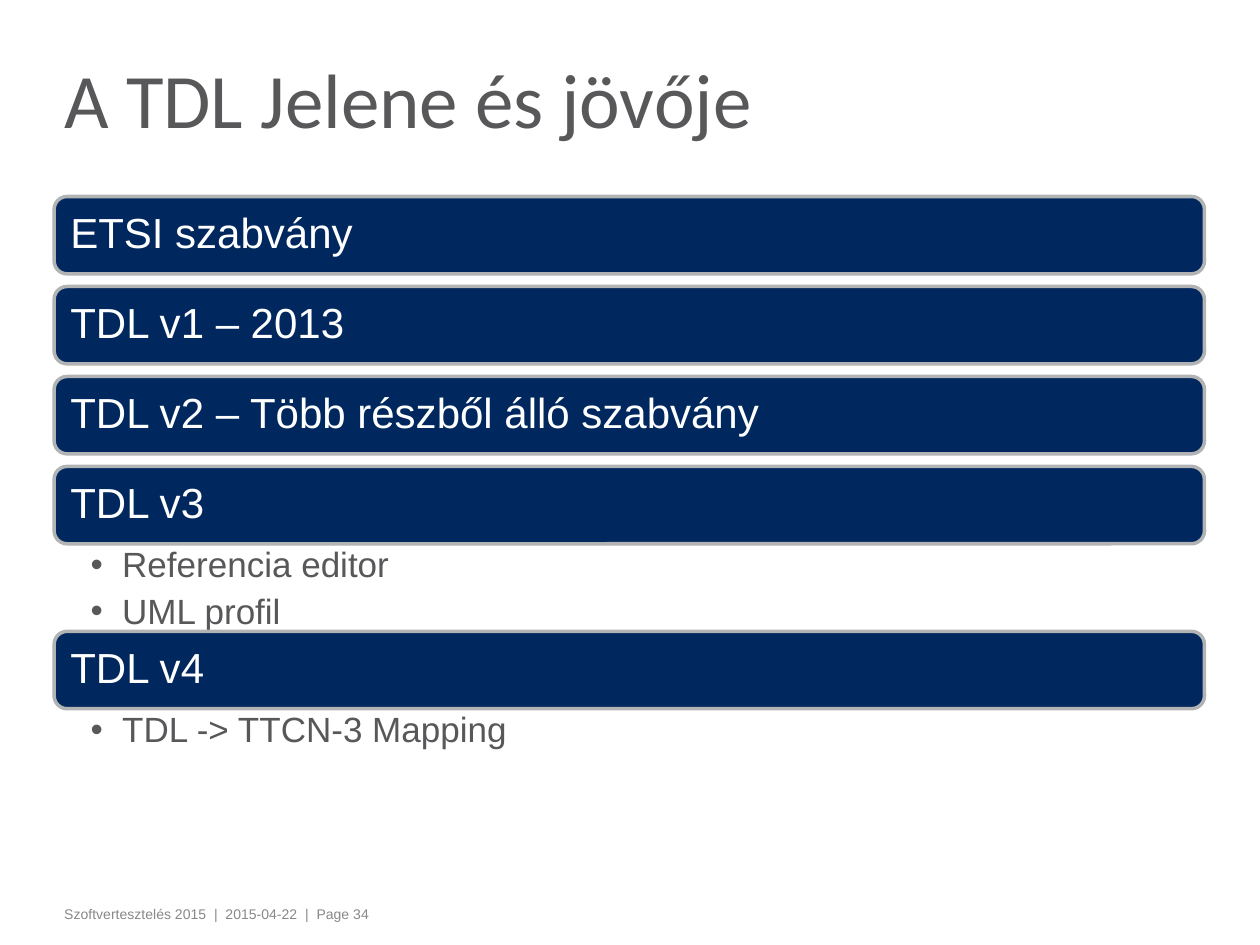
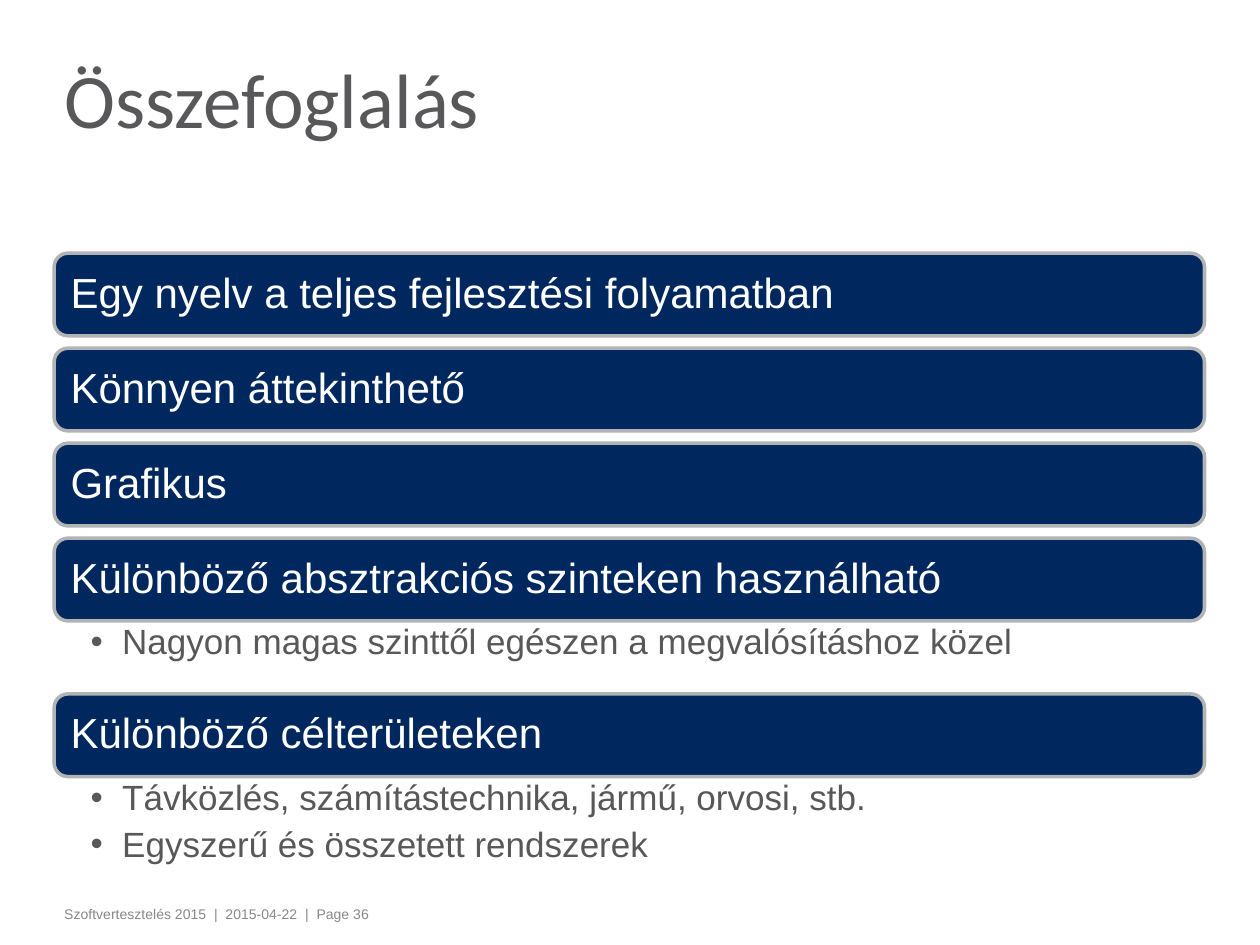
from dataclasses import dataclass
from lxml.etree import SubElement as Sub
from pptx import Presentation as Deck
from pptx.dml.color import RGBColor as Rgb
from pptx.enum.shapes import MSO_SHAPE as Geo
from pptx.enum.text import MSO_ANCHOR as Anchor, MSO_AUTO_SIZE as Auto, PP_ALIGN as Align
from pptx.oxml.ns import qn
from pptx.util import Inches, Pt


@dataclass(frozen=True)
class Theme:
    navy: str = "00285E"
    edge: str = "B1B3B4"
    white: str = "FFFFFF"
    ink: str = "58585A"
    grey: str = "87888A"
    head: str = "Calibri"
    body: str = "Arial"
    big: int = 44
    mid: int = 24
    small: int = 20
    tiny: int = 8


# Grid: 100 columns by 75 rows; content shares one left edge and width
COLS, ROWS = 100, 75
LEFT, WIDE = 4.3, 91.3


def put(obj, vals):
    for name, val in vals.items():
        setattr(obj, name, val)


class Page:
    def __init__(self, deck, theme):
        self.deck, self.theme = deck, theme
        self.slide = None

    def box(self, x, y, w, h):
        col, row = self.deck.slide_width / COLS, self.deck.slide_height / ROWS
        return [round(v) for v in (x * col, y * row, w * col, h * row)]

    def label(self, shape, lines, size, color, face, pad, anchor=Anchor.TOP,
              bullet=False, **para):
        frame = shape.text_frame
        sides = ("margin_left", "margin_top", "margin_right", "margin_bottom")
        put(frame, {"word_wrap": True, "auto_size": Auto.NONE,
                    "vertical_anchor": anchor,
                    **{s: Inches(p) for s, p in zip(sides, pad)}})
        frame.text = "\n".join(lines)
        for par in frame.paragraphs:
            if bullet:
                props = par._p.get_or_add_pPr()
                for key, val in {"marL": 0.25, "indent": -0.25}.items():
                    props.set(key, str(Inches(val)))
                Sub(props, qn("a:buFont"), typeface=face)
                Sub(props, qn("a:buChar"), char="•")
            put(par, {"alignment": Align.LEFT, **para})
            put(par.font, {"size": Pt(size), "name": face})
            par.font.color.rgb = Rgb.from_string(color)

    def text(self, x, y, w, h, *args, **opts):
        self.label(self.slide.shapes.add_textbox(*self.box(x, y, w, h)), *args, **opts)

    def start(self, title, num):
        t = self.theme
        self.slide = self.deck.slides.add_slide(self.deck.slide_layouts[5])
        head = self.slide.shapes.title
        put(head, dict(zip(("left", "top", "width", "height"),
                           self.box(LEFT, 2.6, 82, 11.9))))
        self.label(head, [title], t.big, t.ink, t.head, (0.08, 0, 0.08, 0),
                   Anchor.MIDDLE, line_spacing=0.75)
        self.text(LEFT, 71.4, 80.9, 2.4,
                  [f"Szoftvertesztelés 2015  |  2015-04-22  |  Page {num}"],
                  t.tiny, t.grey, t.body, (0.08, 0.05, 0.08, 0.05))

    def bar(self, y, high, name):
        t = self.theme
        bar = self.slide.shapes.add_shape(Geo.ROUNDED_RECTANGLE,
                                          *self.box(LEFT, y, WIDE, high))
        bar.shadow.inherit = False
        bar.fill.solid()
        bar.fill.fore_color.rgb = Rgb.from_string(t.navy)
        bar.line.color.rgb = Rgb.from_string(t.edge)
        bar.line.width = Pt(2)
        self.label(bar, [name], t.mid, t.white, t.body, (0.1,) * 4,
                   Anchor.MIDDLE, line_spacing=0.9)

    def notes(self, y, high, lines):
        t = self.theme
        self.text(LEFT, y, WIDE, high, lines, t.small, t.ink, t.body,
                  (0.29, 0.03, 0.16, 0.03), bullet=True,
                  line_spacing=0.9, space_after=Pt(5))

    def stack(self, y, high, gap, items):
        """Bars run downward; bullets, where given, fill the space to the next."""
        for name, room, lines in items:
            self.bar(y, high, name)
            y += high
            if lines:
                self.notes(y, room, lines)
            y += room or gap


# Each item: bar label, rows kept for bullets, bullets
PAGES = [
    ("A TDL Jelene és jövője", 34, 15.6, 6.14, 1, [
        ("ETSI szabvány", 0, []),
        ("TDL v1 – 2013", 0, []),
        ("TDL v2 – Több részből álló szabvány", 0, []),
        ("TDL v3", 6.95, ["Referencia editor", "UML profil"]),
        ("TDL v4", 5.4, ["TDL -> TTCN-3 Mapping"]),
    ]),
    ("Összefoglalás", 36, 20.1, 6.56, 0.98, [
        ("Egy nyelv a teljes fejlesztési folyamatban", 0, []),
        ("Könnyen áttekinthető", 0, []),
        ("Grafikus", 0, []),
        ("Különböző absztrakciós szinteken használható", 5.8,
         ["Nagyon magas szinttől egészen a megvalósításhoz közel"]),
        ("Különböző célterületeken", 7.1,
         ["Távközlés, számítástechnika, jármű, orvosi, stb.",
          "Egyszerű és összetett rendszerek"]),
    ]),
]


def main():
    deck = Deck()
    put(deck, {"slide_width": Inches(10), "slide_height": Inches(7.5)})
    page = Page(deck, Theme())
    for title, num, top, high, gap, items in PAGES:
        page.start(title, num)
        page.stack(top, high, gap, items)
    deck.save("out.pptx")


if __name__ == "__main__":
    main()
